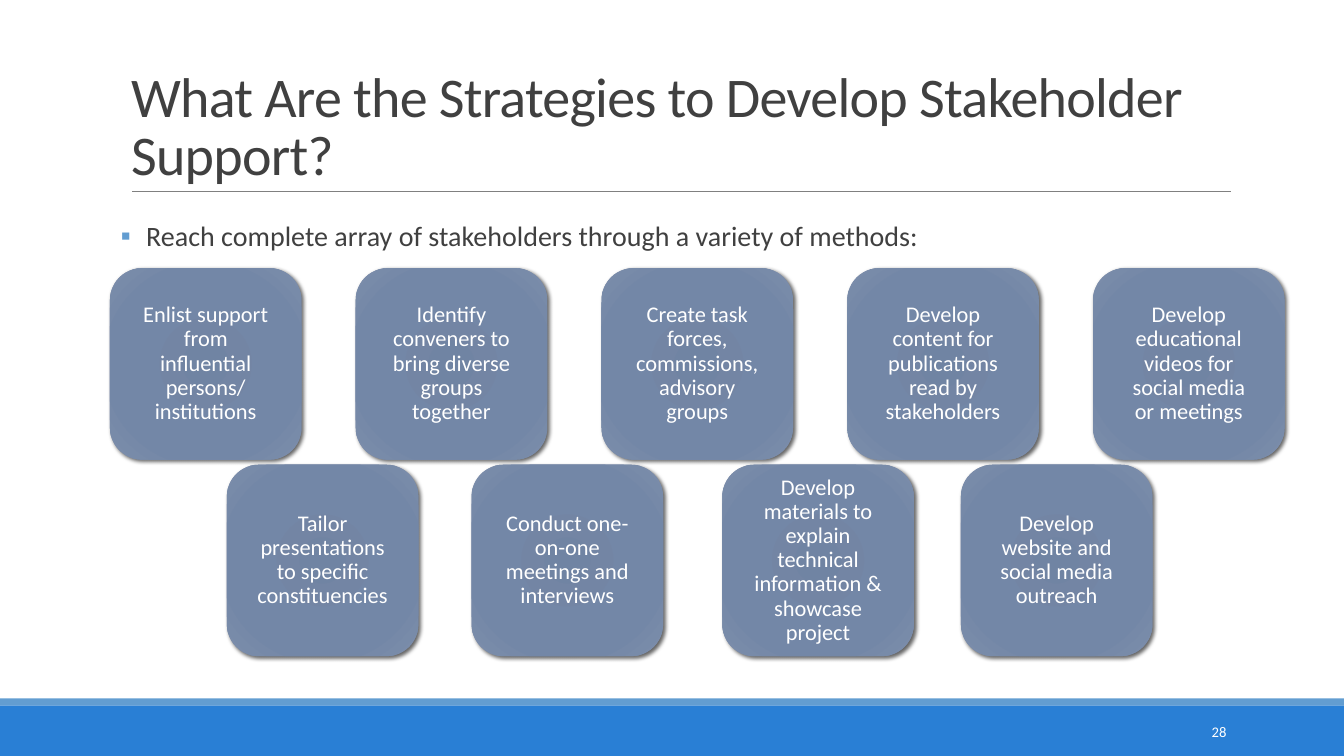
from dataclasses import dataclass

from lxml import etree
from pptx import Presentation
from pptx.dml.color import RGBColor
from pptx.enum.shapes import MSO_CONNECTOR, MSO_SHAPE
from pptx.enum.text import MSO_ANCHOR, MSO_AUTO_SIZE, PP_ALIGN
from pptx.oxml import parse_xml
from pptx.oxml.ns import nsdecls, qn
from pptx.util import Inches, Pt

RECT, ROUND = MSO_SHAPE.RECTANGLE, MSO_SHAPE.ROUNDED_RECTANGLE
STRAIGHT = MSO_CONNECTOR.STRAIGHT
TOP, MIDDLE, BOTTOM = MSO_ANCHOR.TOP, MSO_ANCHOR.MIDDLE, MSO_ANCHOR.BOTTOM
LEFT, CENTER, RIGHT = PP_ALIGN.LEFT, PP_ALIGN.CENTER, PP_ALIGN.RIGHT
NO_FIT = MSO_AUTO_SIZE.NONE

# The slide is a grid of 100 columns by 100 rows
WIDTH, HEIGHT = Inches(13.33), Inches(7.5)
COL, ROW = WIDTH / 100, HEIGHT / 100


@dataclass(frozen=True)
class Theme:
    font: str = "Calibri"
    ink: str = "404040"
    light: str = "FFFFFF"
    band: str = "297FD5"
    accent: str = "629DD1"
    rule: str = "808080"
    tile: tuple = ((0, "7084A3"), (34, "7385A4"), (70, "7387A7"), (100, "7D8EAB"))
    title: float = 40
    body: float = 20
    label: float = 16
    number: float = 10.5


THEME = Theme()

TITLE = "What Are the Strategies to Develop Stakeholder Support?"
LEAD = "Reach complete array of stakeholders through a variety of methods:"
UPPER = (
    "Enlist support from influential persons/ institutions",
    "Identify conveners to bring diverse groups together",
    "Create task forces, commissions, advisory groups",
    "Develop content for publications read by stakeholders",
    "Develop educational videos for social media or meetings",
)
LOWER = (
    "Tailor presentations to specific constituencies",
    "Conduct one-on-one meetings and interviews",
    "Develop materials to explain technical information & showcase project",
    "Develop website and social media outreach",
)


def grid(x, y, w, h):
    return round(x * COL), round(y * ROW), round(w * COL), round(h * ROW)


def place(shape, box):
    shape.left, shape.top, shape.width, shape.height = box


def write(shape, text, size, color, align=LEFT, anchor=TOP, space=1.0, pad=(0.1, 0.05)):
    frame = shape.text_frame
    frame.word_wrap = True
    frame.auto_size = NO_FIT
    frame.vertical_anchor = anchor
    frame.margin_left = frame.margin_right = Inches(pad[0])
    frame.margin_top = frame.margin_bottom = Inches(pad[1])
    para = frame.paragraphs[0]
    para.alignment, para.line_spacing = align, space
    para.space_before = para.space_after = Pt(0)
    run = para.add_run()
    run.text = text
    run.font.name, run.font.size = THEME.font, Pt(size)
    run.font.color.rgb = RGBColor.from_string(color)
    return para, run


def add_bar(slide, box, color):
    bar = slide.shapes.add_shape(RECT, *box)
    bar.shadow.inherit = False
    bar.fill.solid()
    bar.fill.fore_color.rgb = RGBColor.from_string(color)
    bar.line.fill.background()


def add_foot(slide, box):
    # Wide band with a thin strip along its top, and the slide number
    x, y, w, h = box
    strip = round(h * 0.12)
    add_bar(slide, (x, y + strip, w, h - strip), THEME.band)
    add_bar(slide, (x, y, w, strip), THEME.accent)
    spot = (x + round(w * 0.81), y + round(h * 0.23), round(w * 0.11), round(h * 0.7))
    number = slide.shapes.add_textbox(*spot)
    write(number, "28", THEME.number, THEME.light, RIGHT, MIDDLE)


def add_title(slide, box):
    x, y, w, h = box
    title = slide.shapes.title
    place(title, box)
    run = write(title, TITLE, THEME.title, THEME.ink, anchor=BOTTOM, space=0.85)[1]
    run.font._element.set("spc", "-50")
    # Rule under the title
    start, base = x + Inches(0.11), y + h
    rule = slide.shapes.add_connector(STRAIGHT, start, base, start + Inches(10.9), base)
    rule.line.color.rgb = RGBColor.from_string(THEME.rule)
    rule.line.width = Pt(0.5)
    etree.SubElement(rule._element.spPr, qn("a:effectLst"))


def add_lead(slide, box):
    body = slide.placeholders[1]
    place(body, box)
    para = write(body, LEAD, THEME.body, THEME.ink, space=0.9, pad=(0, 0.05))[0]
    para.space_before = Pt(12)
    # Square bullet with a hanging indent
    props = para._p.get_or_add_pPr()
    props.set("marL", str(Inches(0.25)))
    props.set("indent", str(-Inches(0.25)))
    tint = etree.SubElement(props, qn("a:buClr"))
    etree.SubElement(tint, qn("a:srgbClr"), val=THEME.accent)
    etree.SubElement(props, qn("a:buFont"), typeface=THEME.font)
    etree.SubElement(props, qn("a:buChar"), char="▪")


def add_tile(slide, box, text):
    tile = slide.shapes.add_shape(ROUND, *box)
    tile.line.fill.background()
    # Radial shading and a soft shadow
    stops = "".join(
        f'<a:gs pos="{pos * 1000}"><a:srgbClr val="{color}"/></a:gs>'
        for pos, color in THEME.tile
    )
    shade = parse_xml(
        f'<a:gradFill {nsdecls("a")} rotWithShape="1"><a:gsLst>{stops}</a:gsLst>'
        '<a:path path="circle"><a:fillToRect l="100000" t="100000" r="100000" b="100000"/>'
        "</a:path></a:gradFill>"
    )
    glow = parse_xml(
        f'<a:effectLst {nsdecls("a")}><a:outerShdw blurRad="{Pt(3)}" dist="{Pt(2)}" '
        'dir="2700000" algn="br" rotWithShape="0"><a:srgbClr val="000000">'
        '<a:alpha val="60000"/></a:srgbClr></a:outerShdw></a:effectLst>'
    )
    props = tile._element.spPr
    props.find(qn("a:prstGeom")).addnext(shade)
    props.append(glow)
    write(tile, text, THEME.label, THEME.light, CENTER, MIDDLE, 0.9, (0.21, 0.21))


def add_tiles(slide, box, labels, nudge=None):
    # Square tiles spread evenly from edge to edge; nudge shifts single ones
    x, y, w, side = box
    step = (w - side) / (len(labels) - 1)
    for i, text in enumerate(labels):
        shift = (nudge or {}).get(i, 0) * COL
        add_tile(slide, (round(x + i * step + shift), y, side, side), text)


def main():
    deck = Presentation()
    deck.slide_width, deck.slide_height = WIDTH, HEIGHT
    slide = deck.slides.add_slide(deck.slide_layouts[1])
    add_foot(slide, grid(0, 92.4, 100, 7.6))
    add_title(slide, grid(9, 4.13, 88.75, 21.2))
    add_lead(slide, grid(9, 28.8, 76.3, 8.53))
    add_tiles(slide, grid(8.18, 35.47, 87.4, 25.33), UPPER)
    add_tiles(slide, grid(16.88, 61.47, 68.87, 25.33), LOWER, {2: 0.45})
    deck.save("out.pptx")


if __name__ == "__main__":
    main()
